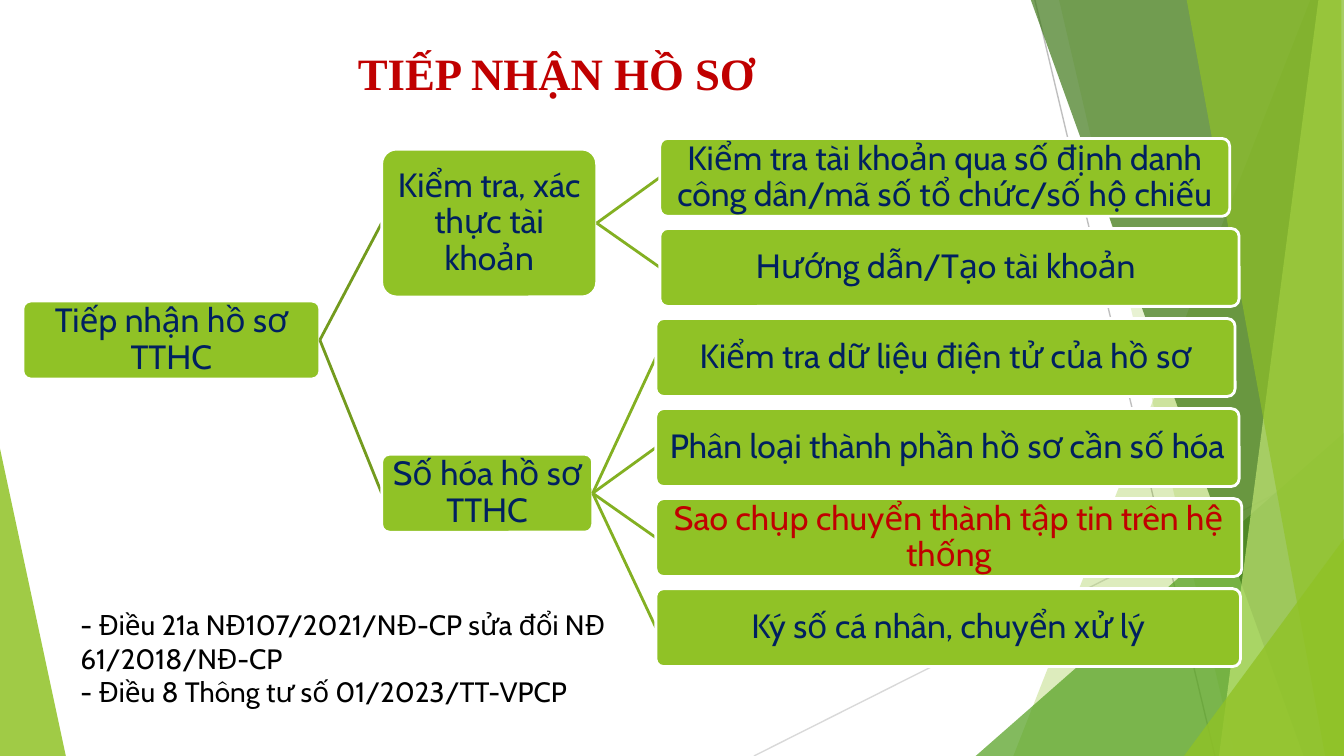
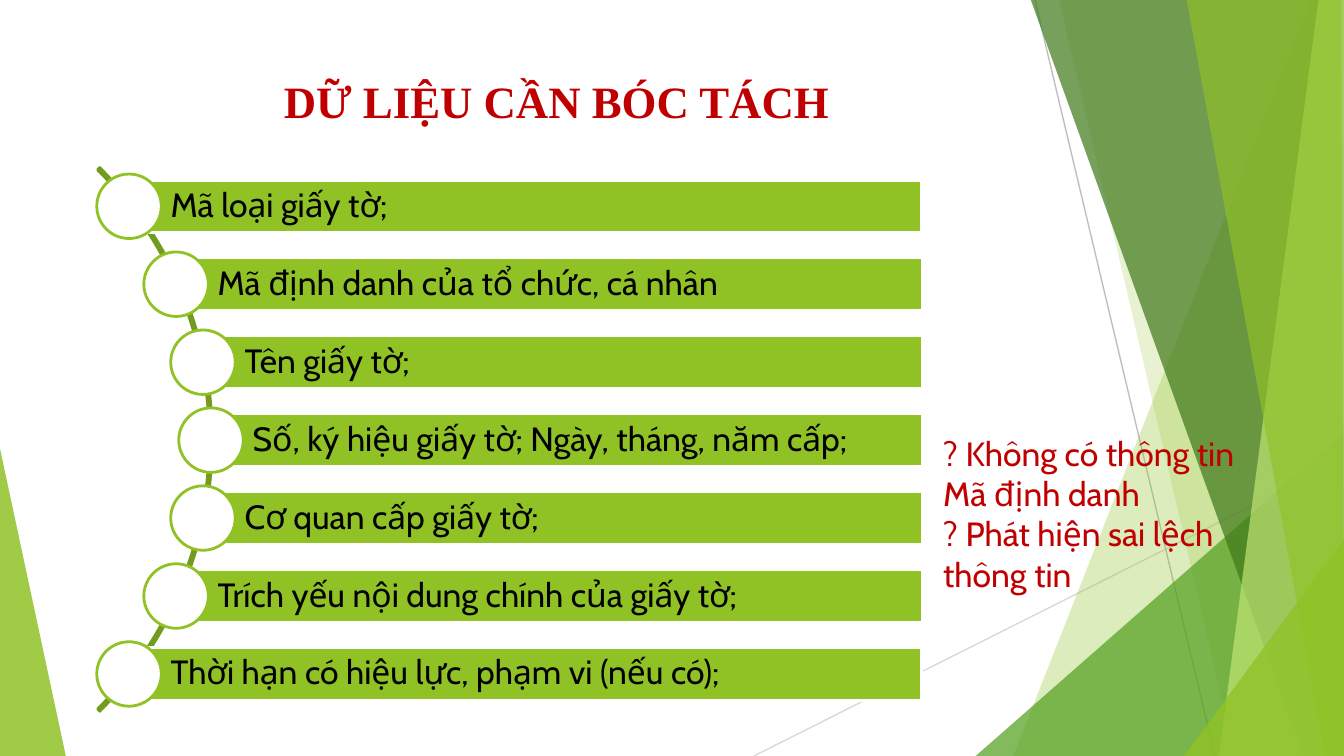
from dataclasses import dataclass
from typing import Optional

from pptx import Presentation
from pptx.dml.color import RGBColor
from pptx.enum.shapes import MSO_CONNECTOR, MSO_SHAPE
from pptx.enum.text import MSO_ANCHOR, PP_ALIGN
from pptx.oxml.ns import qn
from pptx.oxml.xmlchemy import OxmlElement
from pptx.shapes.autoshape import Shape
from pptx.slide import Slide
from pptx.util import Inches, Pt

WIDTH = 10
HEIGHT = WIDTH * 9 / 16

GREEN = RGBColor(0x90, 0xC2, 0x26)
LEAF = RGBColor(0x54, 0xA0, 0x21)
FOREST = RGBColor(0x3F, 0x78, 0x19)
LIME = RGBColor(0xC0, 0xE4, 0x74)
OLIVE = RGBColor(0x73, 0x9B, 0x1E)
MOSS = RGBColor(0x83, 0xB0, 0x22)
SILVER = RGBColor(0xD9, 0xD9, 0xD9)
GREY = RGBColor(0xBF, 0xBF, 0xBF)
WHITE = RGBColor(0xFF, 0xFF, 0xFF)
BLACK = RGBColor(0x00, 0x00, 0x00)
NAVY = RGBColor(0x00, 0x20, 0x60)
RED = RGBColor(0xC0, 0x00, 0x00)

BODY = "Cabin"
HEAD = "Times New Roman"

Point = tuple[float, float]


@dataclass(frozen=True)
class Box:
    left: float
    top: float
    width: float
    height: float

    @property
    def middle(self) -> float:
        return self.top + self.height / 2

    def lengths(self) -> list[int]:
        return [Inches(v) for v in (self.left, self.top, self.width, self.height)]


@dataclass(frozen=True)
class Facet:
    """A see-through polygon of the backdrop; alpha is in percent."""
    color: RGBColor
    alpha: int
    points: tuple[Point, ...]


@dataclass(frozen=True)
class Ray:
    color: RGBColor
    start: Point
    end: Point


@dataclass(frozen=True)
class Style:
    size: int = 18
    color: RGBColor = BLACK
    font: str = BODY
    bold: bool = False
    align: PP_ALIGN = PP_ALIGN.LEFT
    anchor: MSO_ANCHOR = MSO_ANCHOR.MIDDLE
    spacing: float = 1.0
    margins: tuple[float, float, float, float] = (0.1, 0.05, 0.1, 0.05)


@dataclass(frozen=True)
class Node:
    text: str
    box: Box
    color: RGBColor = NAVY
    link: RGBColor = OLIVE
    kids: tuple["Node", ...] = ()


RAYS = (
    Ray(SILVER, (5.61, HEIGHT), (WIDTH, 3.42)),
    Ray(GREY, (7.7, 0), (9.04, HEIGHT)),
)
CORNER = Facet(GREEN, 85, ((-0.01, 3.29), (0.49, HEIGHT), (-0.01, HEIGHT)))
FACETS = (
    Facet(GREEN, 30, ((9.75, 0), (7.54, HEIGHT), (WIDTH, HEIGHT), (WIDTH, 0))),
    Facet(GREEN, 20, ((7.88, 0), (9.19, HEIGHT), (WIDTH, HEIGHT), (WIDTH, 0))),
    Facet(LEAF, 72, ((7.26, HEIGHT), (WIDTH, 3.22), (WIDTH, HEIGHT))),
    Facet(FOREST, 70, ((7.67, 0), (9.7, HEIGHT), (WIDTH, HEIGHT), (WIDTH, 0))),
    Facet(LIME, 70, ((9.81, 0), (9.07, HEIGHT), (WIDTH, HEIGHT), (WIDTH, 0))),
    Facet(GREEN, 65, ((8.83, 0), (9.86, HEIGHT), (WIDTH, HEIGHT), (9.98, 0))),
    Facet(GREEN, 80, ((8.81, HEIGHT), (WIDTH, 4.01), (WIDTH, HEIGHT))),
)

TITLE = Style(24, RED, HEAD, True, PP_ALIGN.CENTER, MSO_ANCHOR.TOP)
BAR = Style(spacing=0.9, margins=(0.31, 0.05, 0.05, 0.05))

NODE_H = 0.58
LEAF_TOP, LEAF_STEP = 1.03, 0.67


def leaf(row: int, text: str, left: float, width: float, color: RGBColor = NAVY) -> Node:
    return Node(text, Box(left, LEAF_TOP + row * LEAF_STEP, width, NODE_H), color)


CHECK = Node(
    "Kiểm tra, xác thực tài khoản", Box(2.84, 1.11, 1.6, 1.1), link=MOSS,
    kids=(
        leaf(0, "Kiểm tra tài khoản qua số định danh công dân/mã số tổ chức/số hộ chiếu", 4.91, 4.24),
        leaf(1, "Hướng dẫn/Tạo tài khoản ", 4.91, 4.31),
    ),
)
SCAN = Node(
    "Số hóa hồ sơ TTHC", Box(2.84, 3.38, 1.57, NODE_H), link=MOSS,
    kids=(
        leaf(2, "Kiểm tra dữ liệu điện tử của hồ sơ", 4.88, 4.31),
        leaf(3, "Phân loại thành phần hồ sơ cần số hóa", 4.88, 4.34),
        leaf(4, "Sao chụp chuyển thành tập tin trên hệ thống", 4.88, 4.36, RED),
        leaf(5, "Ký số cá nhân, chuyển xử lý", 4.88, 4.35),
    ),
)
ROOT = Node("Tiếp nhận hồ sơ TTHC", Box(0.17, 2.24, 2.21, NODE_H), kids=(CHECK, SCAN))

LAWS = (
    "- Điều 21a NĐ107/2021/NĐ-CP sửa đổi NĐ 61/2018/NĐ-CP",
    "- Điều 8 Thông tư số 01/2023/TT-VPCP",
)
FIELDS = (
    "Mã loại giấy tờ;",
    "Mã định danh của tổ chức, cá nhân",
    "Tên giấy tờ;",
    "Số, ký hiệu giấy tờ; Ngày, tháng, năm cấp;",
    "Cơ quan cấp giấy tờ;",
    "Trích yếu nội dung chính của giấy tờ;",
    "Thời hạn có hiệu lực, phạm vi (nếu có);",
)
ISSUES = ("? Không có thông tin Mã định danh", "? Phát hiện sai lệch thông tin")

# Left edges of the bars, from the middle row outwards
INDENTS = (1.57, 1.51, 1.31, 0.96)
BAR_TOP, BAR_STEP, BAR_H, BAR_END = 1.34, 0.58, 0.39, 6.86
DOT = 0.48
ARC = Box(-4.14, 0.41, 5.72, 5.72)


def paint(shape: Shape, fill: Optional[RGBColor], line: Optional[RGBColor]) -> None:
    shape.shadow.inherit = False
    if fill is None:
        shape.fill.background()
    else:
        shape.fill.solid()
        shape.fill.fore_color.rgb = fill
    if line is None:
        shape.line.fill.background()
    else:
        shape.line.color.rgb = line
        shape.line.width = Pt(1.5)


def add_shape(slide: Slide, kind: MSO_SHAPE, box: Box,
              fill: Optional[RGBColor], line: Optional[RGBColor]) -> Shape:
    shape = slide.shapes.add_shape(kind, *box.lengths())
    paint(shape, fill, line)
    return shape


def write(shape: Shape, lines: tuple[str, ...], style: Style) -> None:
    frame = shape.text_frame
    frame.word_wrap = True
    frame.vertical_anchor = style.anchor
    (frame.margin_left, frame.margin_top,
     frame.margin_right, frame.margin_bottom) = map(Inches, style.margins)
    for i, text in enumerate(lines):
        para = frame.add_paragraph() if i else frame.paragraphs[0]
        para.alignment = style.align
        para.line_spacing = style.spacing
        run = para.add_run()
        run.text = text
        run.font.name = style.font
        run.font.size = Pt(style.size)
        run.font.bold = style.bold
        run.font.color.rgb = style.color


def add_text(slide: Slide, box: Box, lines: tuple[str, ...], style: Style) -> None:
    write(slide.shapes.add_textbox(*box.lengths()), lines, style)


def add_line(slide: Slide, ray: Ray, width: float) -> None:
    ends = [Inches(v) for v in ray.start + ray.end]
    line = slide.shapes.add_connector(MSO_CONNECTOR.STRAIGHT, *ends)
    line.line.color.rgb = ray.color
    line.line.width = Pt(width)
    line._element.spPr.append(OxmlElement("a:effectLst"))


def add_facet(slide: Slide, facet: Facet) -> None:
    first, *rest = [(Inches(x), Inches(y)) for x, y in facet.points]
    pen = slide.shapes.build_freeform(*first)
    pen.add_line_segments(rest, close=True)
    shape = pen.convert_to_shape()
    paint(shape, facet.color, None)
    alpha = OxmlElement("a:alpha")
    alpha.set("val", str(facet.alpha * 1000))
    shape._element.spPr.find(".//" + qn("a:srgbClr")).append(alpha)


def add_slide(deck: Presentation, title: str, box: Box) -> Slide:
    """Add a blank slide with the shared backdrop and title style."""
    slide = deck.slides.add_slide(deck.slide_layouts[6])
    add_facet(slide, CORNER)
    for ray in RAYS:
        add_line(slide, ray, 0.75)
    for facet in FACETS:
        add_facet(slide, facet)
    add_text(slide, box, (title,), TITLE)
    return slide


def add_tree(slide: Slide, node: Node) -> None:
    """Draw a node, then its links and its branches."""
    box = node.box
    shape = add_shape(slide, MSO_SHAPE.ROUNDED_RECTANGLE, box, GREEN, WHITE)
    shape.adjustments[0] = 0.1
    style = Style(color=node.color, align=PP_ALIGN.CENTER, spacing=0.9, margins=(0.01,) * 4)
    write(shape, (node.text,), style)
    for kid in node.kids:
        start = (box.left + box.width, box.middle)
        add_line(slide, Ray(node.link, start, (kid.box.left, kid.box.middle)), 1.5)
        add_tree(slide, kid)


def add_fields(slide: Slide) -> None:
    """Draw the arc with one bar and one dot for each field."""
    arc = add_shape(slide, MSO_SHAPE.BLOCK_ARC, ARC, None, OLIVE)
    for i, value in enumerate((189, 27, 0.004)):
        arc.adjustments[i] = value
    for row, text in enumerate(FIELDS):
        left = INDENTS[abs(row - len(FIELDS) // 2)]
        box = Box(left, BAR_TOP + row * BAR_STEP, BAR_END - left, BAR_H)
        bar = add_shape(slide, MSO_SHAPE.RECTANGLE, box, GREEN, WHITE)
        write(bar, (text,), BAR)
        dot = Box(left - DOT / 2, box.middle - DOT / 2, DOT, DOT)
        add_shape(slide, MSO_SHAPE.OVAL, dot, WHITE, GREEN)


def main() -> None:
    deck = Presentation()
    deck.slide_width, deck.slide_height = Inches(WIDTH), Inches(HEIGHT)

    intake = add_slide(deck, "TIẾP NHẬN HỒ SƠ", Box(0.67, 0.29, 6.94, 0.73))
    add_tree(intake, ROOT)
    note = add_shape(intake, MSO_SHAPE.RECTANGLE, Box(0.5, 4.48, 4.17, 0.83), WHITE, None)
    write(note, LAWS, Style(15))

    data = add_slide(deck, "DỮ LIỆU CẦN BÓC TÁCH", Box(0.67, 0.5, 6.94, 0.65))
    add_fields(data)
    add_text(data, Box(6.92, 3.17, 2.67, 1.31), ISSUES, Style(color=RED, anchor=MSO_ANCHOR.TOP))

    deck.save("out.pptx")


if __name__ == "__main__":
    main()
